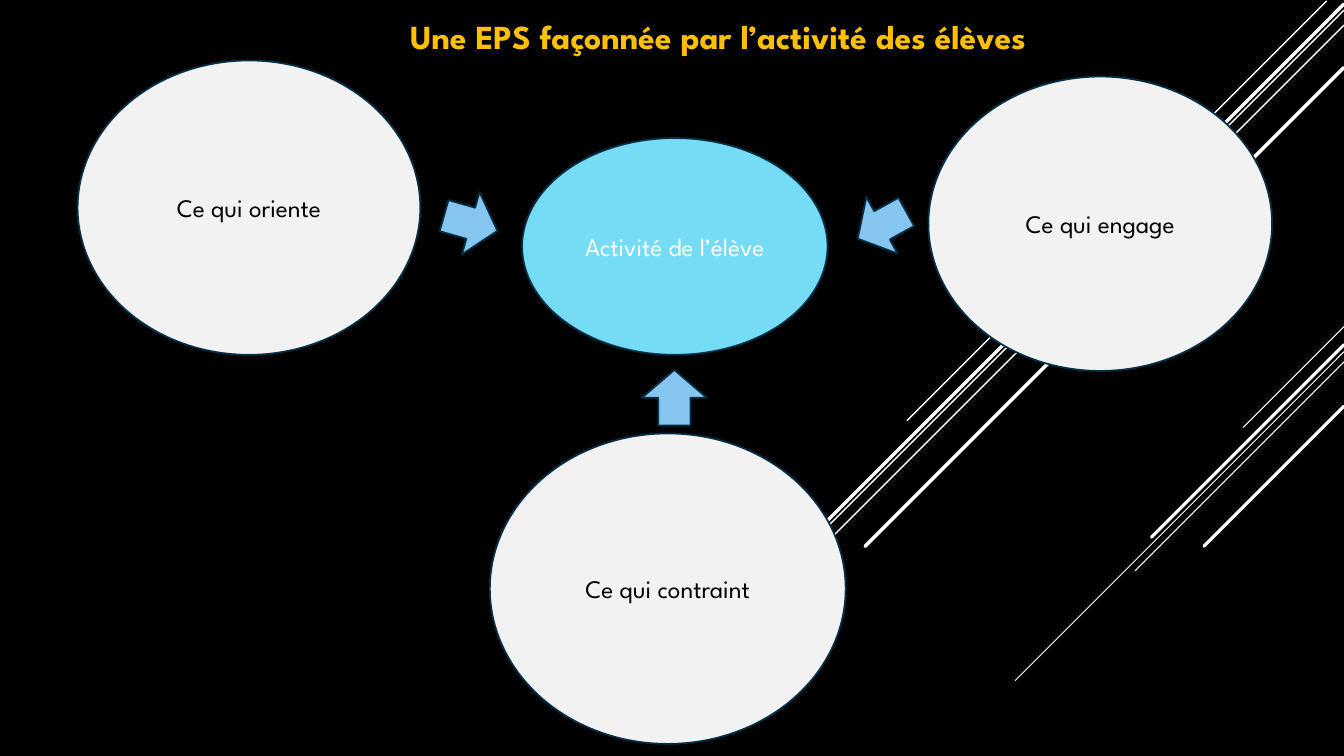
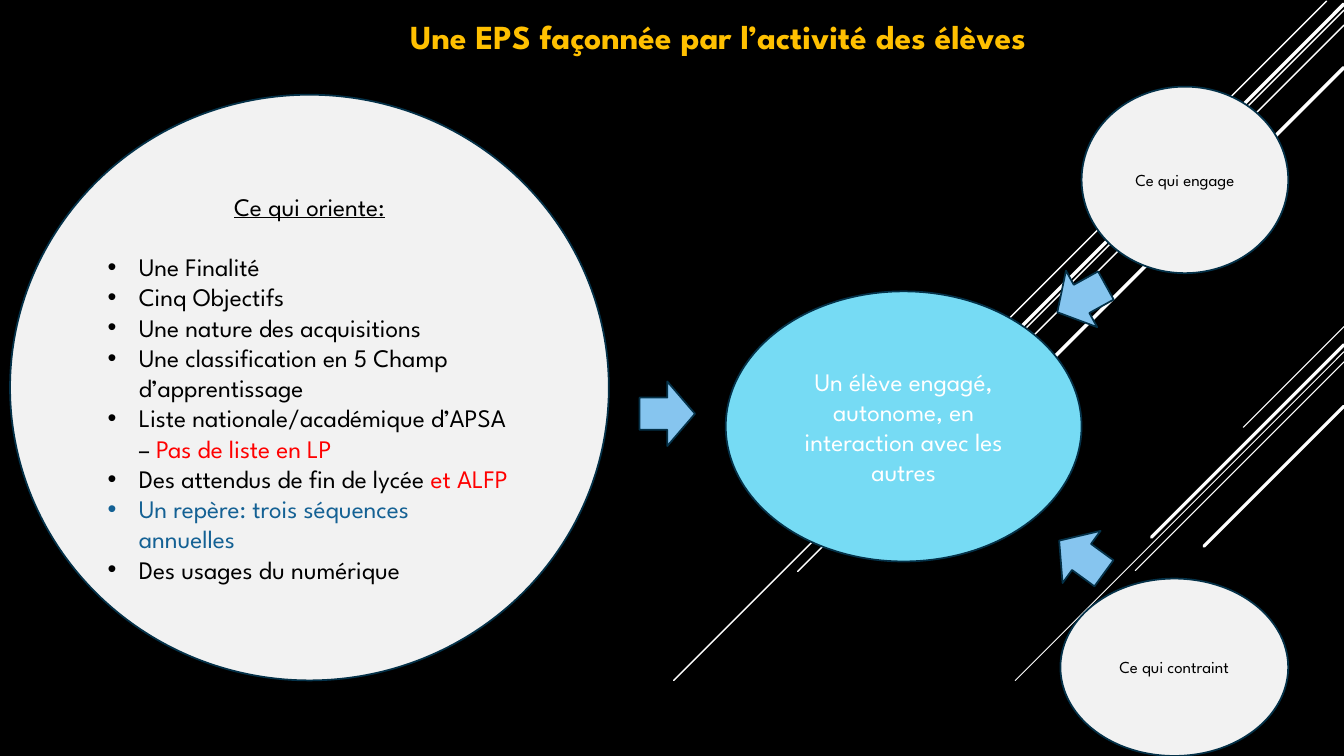
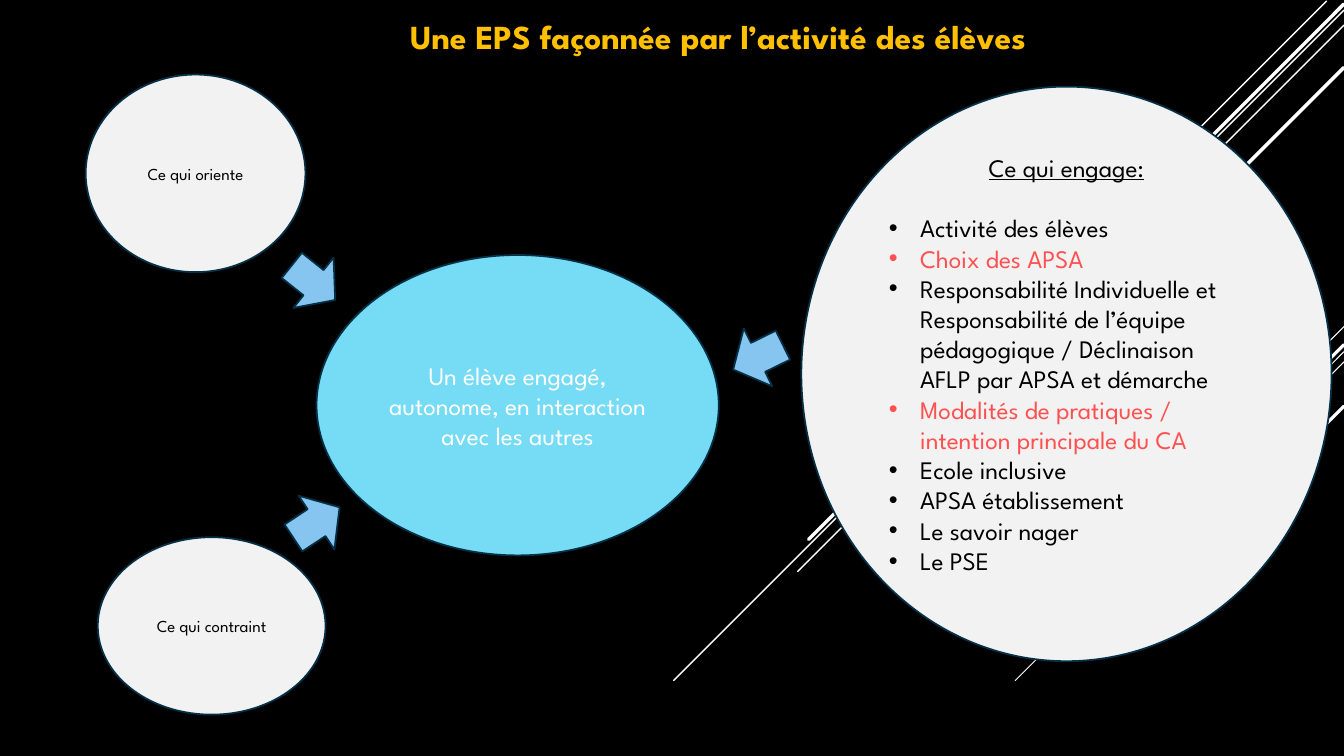
from lxml.etree import SubElement
from pptx import Presentation
from pptx.dml.color import RGBColor
from pptx.enum.shapes import MSO_CONNECTOR, MSO_SHAPE
from pptx.enum.text import MSO_ANCHOR, MSO_AUTO_SIZE, PP_ALIGN
from pptx.oxml.ns import qn
from pptx.util import Inches, Pt

# The grid has ten columns and ten rows to the inch.
COLUMNS, ROWS = 133.33, 75
TITLE_ONLY = 5
COLORS = {
    "background": "000000",
    "title": "FFC000",
    "ray": "FFFFFF",
    "circle": "F2F2F2",
    "center": "76DBF4",
    "arrow": "86C5EF",
    "outline": "043148",
    "black": "000000",
    "white": "FFFFFF",
    "red": "FF0000",
    "blue": "146194",
    "coral": "FF5050",
}
FONT = "League Spartan"
TITLE = "Une EPS façonnée par l’activité des élèves"
STUDENT = "Un élève engagé, autonome, en interaction avec les autres"

# Diagonal rays: start column, start row, cells run down to the left, width in points.
RAYS = [
    (COLUMNS, 32.4, 10, 0.75),
    (COLUMNS, 34.9, 32.6, 0.75),
    (COLUMNS, 35.9, 20.7, 0.75),
    (COLUMNS, 34.2, 19.1, 2.25),
    (COLUMNS, 40.3, 13.9, 2.25),
    (131.6, 0.1, 41.6, 1),
    (COLUMNS, 1, 66.5, 1),
    (COLUMNS, 2.5, 54.2, 1),
    (COLUMNS, 0.4, 53.1, 2.5),
    (COLUMNS, 6.7, 47.5, 2.5),
]
ARROW_SIZE = (6.4, 5.5)


def cells(*counts):
    return [Inches(count / 10) for count in counts]


def set_values(target, values):
    for name, value in values.items():
        setattr(target, name, value)


class Deck:
    """Holds the shared style and the slide being drawn."""

    def __init__(self):
        self.presentation = Presentation()
        width, height = cells(COLUMNS, ROWS)
        set_values(self.presentation, {"slide_width": width, "slide_height": height})
        self.paint(self.presentation.slide_master.background.fill, "background")
        self.slide = None

    def paint(self, fill, color):
        fill.solid()
        fill.fore_color.rgb = RGBColor.from_string(COLORS[color])

    def add_slide(self):
        layout = self.presentation.slide_layouts[TITLE_ONLY]
        self.slide = self.presentation.slides.add_slide(layout)
        for ray in RAYS:
            self.ray(*ray)
        self.title(TITLE)

    def title(self, text):
        shape = self.slide.shapes.title
        left, top, width, height = cells(9.2, 1.1, 124.1, 5)
        set_values(shape, {"left": left, "top": top, "width": width, "height": height})
        set_values(shape.text_frame, {
            "word_wrap": True,
            "auto_size": MSO_AUTO_SIZE.NONE,
            "vertical_anchor": MSO_ANCHOR.TOP,
        })
        paragraph = shape.text_frame.paragraphs[0]
        paragraph.alignment = PP_ALIGN.CENTER
        self.run(paragraph, text, "title", size=24, bold=True)

    def ray(self, column, row, length, width):
        start_and_end = cells(column, row, column - length, row + length)
        connector = self.slide.shapes.add_connector(MSO_CONNECTOR.STRAIGHT, *start_and_end)
        self.paint(connector.line.fill, "ray")
        connector.line.width = Pt(width)
        properties = connector._element.spPr
        properties.find(qn("a:ln")).set("cap", "rnd")
        SubElement(properties, qn("a:effectLst"))

    def outlined_shape(self, kind, place, color):
        shape = self.slide.shapes.add_shape(kind, *cells(*place))
        shape.shadow.inherit = False
        self.paint(shape.fill, color)
        self.paint(shape.line.fill, "outline")
        shape.line.width = Pt(1.25)
        return shape

    def arrow(self, column, row, rotation):
        place = (column, row, *ARROW_SIZE)
        self.outlined_shape(MSO_SHAPE.UP_ARROW, place, "arrow").rotation = rotation

    def ellipse(self, place, text, fill="circle", color="black", **font):
        shape = self.outlined_shape(MSO_SHAPE.OVAL, place, fill)
        set_values(shape.text_frame, {"word_wrap": True, "vertical_anchor": MSO_ANCHOR.MIDDLE})
        paragraph = shape.text_frame.paragraphs[0]
        paragraph.alignment = PP_ALIGN.CENTER
        self.run(paragraph, text, color, **font)
        return shape

    def center(self, place, text):
        self.ellipse(place, text, "center", "white")

    def list_ellipse(self, place, heading, items, bottom=0.5):
        """Each item is a list of (text, color) runs."""
        frame = self.ellipse(place, heading, underline=True).text_frame
        frame.margin_bottom, = cells(bottom)
        frame.paragraphs[0].space_after = Pt(21.6)
        for runs in items:
            paragraph = frame.add_paragraph()
            paragraph.alignment = PP_ALIGN.LEFT
            self.bullet(paragraph)
            for text, color in runs:
                self.run(paragraph, text, color)

    def bullet(self, paragraph):
        indent, = cells(3.1)
        properties = paragraph._p.get_or_add_pPr()
        properties.set("marL", str(indent))
        properties.set("indent", str(-indent))
        SubElement(properties, qn("a:buFont"), typeface="Arial")
        SubElement(properties, qn("a:buChar"), char="•")

    def run(self, paragraph, text, color, size=18, **font):
        run = paragraph.add_run()
        run.text = text
        set_values(run.font, {"name": FONT, "size": Pt(size), **font})
        self.paint(run.font.fill, color)


def add_overview(deck):
    deck.add_slide()
    deck.ellipse((7.7, 6, 34, 29.2), "Ce qui oriente")
    deck.ellipse((48.6, 43, 35.3, 30.8), "Ce qui contraint")
    deck.ellipse((92.1, 7.6, 34.1, 29.2), "Ce qui engage")
    deck.center((51.8, 13.7, 30.3, 21.5), "Activité de l’élève")
    for arrow in [(63.7, 36.7, 0), (43.5, 19.4, 105.8), (84.3, 19.6, 241.1)]:
        deck.arrow(*arrow)


def add_orientation(deck):
    deck.add_slide()
    deck.list_ellipse((1, 9.4, 59.4, 58.1), "Ce qui oriente:", [
        [("Une Finalité", "black")],
        [("Cinq Objectifs", "black")],
        [("Une nature des acquisitions", "black")],
        [("Une classification en 5 Champ d’apprentissage", "black")],
        [("Liste nationale/académique d’APSA – ", "black"), ("Pas de liste en LP", "red")],
        [("Des attendus de fin de lycée ", "black"), ("et ALFP", "red")],
        [("Un repère: trois séquences annuelles", "blue")],
        [("Des usages du numérique", "black")],
    ])
    deck.ellipse((105.2, 57.4, 22.6, 17.6), "Ce qui contraint", size=12)
    deck.ellipse((107.3, 8.6, 20.5, 18.5), "Ce qui engage", size=12)
    deck.center((72, 28.9, 35.3, 26.8), STUDENT)
    for arrow in [(104.1, 26.9, 241.1), (104.1, 52.5, 306.1), (63, 38.3, 90)]:
        deck.arrow(*arrow)


def add_engagement(deck):
    deck.add_slide()
    deck.ellipse((8.5, 7.4, 21.8, 19.6), "Ce qui oriente", size=12)
    deck.ellipse((9.7, 53.3, 22.6, 17.6), "Ce qui contraint", size=12)
    deck.list_ellipse((79.5, 8.6, 52.6, 57), "Ce qui engage:", [
        [("Activité des élèves", "black")],
        [("Choix des APSA", "coral")],
        [("Responsabilité Individuelle et Responsabilité de l’équipe pédagogique / "
          "Déclinaison AFLP par APSA et démarche", "black")],
        [("Modalités de pratiques / intention principale du CA", "coral")],
        [("Ecole inclusive", "black")],
        [("APSA établissement", "black")],
        [("Le savoir nager", "black")],
        [("Le PSE", "black")],
    ], bottom=2.5)
    deck.center((31.4, 25.3, 39.9, 29.8), STUDENT)
    for arrow in [(27.9, 25.3, 128.6), (28.2, 49.1, 56.4), (72, 32.7, 243.8)]:
        deck.arrow(*arrow)


def main():
    deck = Deck()
    add_overview(deck)
    add_orientation(deck)
    add_engagement(deck)
    deck.presentation.save("out.pptx")


if __name__ == "__main__":
    main()
